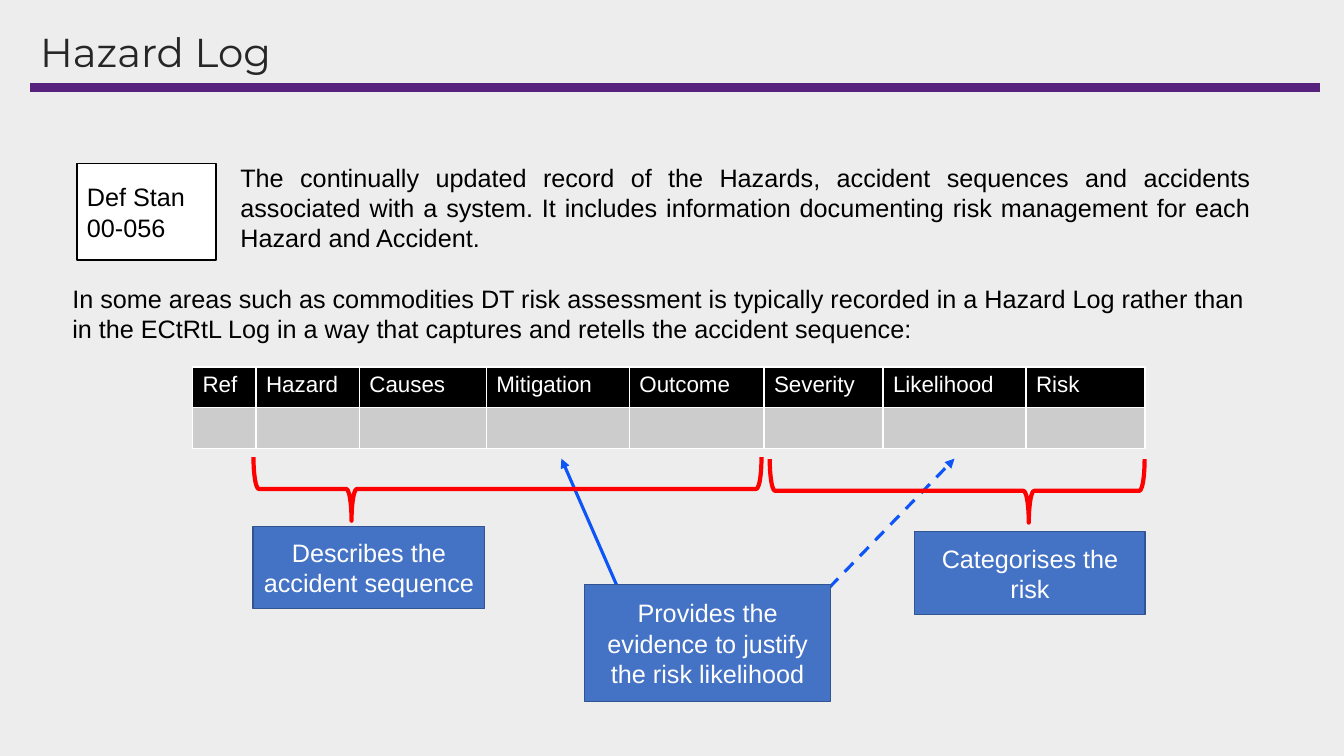
"""Build the Hazard Log slide."""
from lxml.etree import SubElement
from pptx import Presentation
from pptx.dml.color import RGBColor
from pptx.enum.dml import MSO_LINE
from pptx.enum.shapes import MSO_CONNECTOR, MSO_SHAPE
from pptx.enum.text import MSO_ANCHOR, PP_ALIGN
from pptx.oxml.ns import qn
from pptx.util import Pt


class Theme:
    back = RGBColor.from_string("EDEDED")
    rule = RGBColor.from_string("56227D")
    title = RGBColor.from_string("262626")
    black = RGBColor.from_string("000000")
    white = RGBColor.from_string("FFFFFF")
    grey = RGBColor.from_string("CCCCCC")
    box = RGBColor.from_string("4472C4")
    edge = RGBColor.from_string("325491")
    arrow = RGBColor.from_string("0D55F7")
    brace = RGBColor.from_string("FF0000")
    head_font, font = "Montserrat", "Arial"
    head_size, size, cell_size = Pt(28.8), Pt(18), Pt(16)


def write(frame, text, color, align=PP_ALIGN.LEFT, size=Theme.size, font=Theme.font):
    frame.text = text
    frame.word_wrap = True
    para = frame.paragraphs[0]
    para.alignment = align
    for run in para.runs:
        run.font.size = size
        run.font.name = font
        run.font.color.rgb = color


def draw_line(start, end, color, width):
    line = shapes.add_connector(MSO_CONNECTOR.STRAIGHT, *map(Pt, start + end))
    line.line.color.rgb = color
    line.line.width = Pt(width)
    SubElement(line._element.spPr, qn("a:effectLst"))
    return line


deck = Presentation()
deck.slide_width, deck.slide_height = Pt(960), Pt(540)
slide = deck.slides.add_slide(deck.slide_layouts[6])
slide.background.fill.solid()
slide.background.fill.fore_color.rgb = Theme.back
shapes = slide.shapes

draw_line((21.6, 62.6), (943.2, 62.6), Theme.rule, 6)
title = shapes.add_textbox(Pt(21.6), Pt(19.8), Pt(921.6), Pt(38.2)).text_frame
write(title, "Hazard Log", Theme.title, size=Theme.head_size, font=Theme.head_font)
title.vertical_anchor = MSO_ANCHOR.MIDDLE
title.paragraphs[0].line_spacing = 0.9

for start, end, dash in [
    ((465.8, 475.9), (401, 327.6), None),
    ((537.8, 475.9), (681.8, 327.6), MSO_LINE.DASH),
]:
    arrow = draw_line(start, end, Theme.arrow, 2.25)
    if dash:
        arrow.line.dash_style = dash
    SubElement(arrow.line._get_or_add_ln(), qn("a:tailEnd"), type="triangle")

for place, align, text in [
    ((164.6, 112.3, 735.8, 72.7), PP_ALIGN.JUSTIFY,
     "The continually updated record of the Hazards, accident sequences and accidents "
     "associated with a system. It includes information documenting risk management "
     "for each Hazard and Accident."),
    ((44.6, 198.7, 866.2, 51.1), PP_ALIGN.LEFT,
     "In some areas such as commodities DT risk assessment is typically recorded in a "
     "Hazard Log rather than in the ECtRtL Log in a way that captures and retells the "
     "accident sequence:"),
]:
    write(shapes.add_textbox(*map(Pt, place)).text_frame, text, Theme.black, align)

heads = ["Ref", "Hazard", "Causes", "Mitigation", "Outcome", "Severity", "Likelihood", "Risk"]
widths = [45.4, 73.8, 90.7, 102.2, 96.2, 85, 102.2, 85]
table = shapes.add_table(2, len(heads), Pt(137.5), Pt(262.1), Pt(sum(widths)), Pt(58.4)).table
for col, width in zip(table.columns, widths):
    col.width = Pt(width)
for row, (texts, color) in enumerate([(heads, Theme.black), ([""] * len(heads), Theme.grey)]):
    table.rows[row].height = Pt(29.2)
    for col, text in enumerate(texts):
        cell = table.cell(row, col)
        write(cell.text_frame, text, Theme.white, size=Theme.cell_size)
        for side in ("lnL", "lnR", "lnT", "lnB"):
            border = SubElement(cell._tc.get_or_add_tcPr(), qn("a:" + side), w=str(Pt(1)))
            SubElement(SubElement(border, qn("a:solidFill")), qn("a:srgbClr"), val=str(Theme.white))
        cell.fill.solid()
        cell.fill.fore_color.rgb = color

for place, point in [((339.8, 167.8, 45.4, 362.9), 0.807), ((661, 216.7, 45.4, 267.8), 0.309)]:
    brace = shapes.add_shape(MSO_SHAPE.RIGHT_BRACE, *map(Pt, place))
    brace.rotation = 90
    brace.adjustments[0], brace.adjustments[1] = 0.083, point
    brace.shadow.inherit = False
    brace.fill.background()
    brace.line.color.rgb = Theme.brace
    brace.line.width = Pt(3)

blue = (Theme.box, Theme.edge, Theme.white, PP_ALIGN.CENTER)
plain = (Theme.white, Theme.black, Theme.black, PP_ALIGN.LEFT)
for place, text, (fill, edge, ink, align) in [
    ((180.8, 376.2, 165.4, 58.3), "Describes the accident sequence", blue),
    ((417.6, 417.6, 175.7, 83.5), "Provides the evidence to justify the risk likelihood", blue),
    ((653.4, 379.8, 164.6, 59), "Categorises the risk", blue),
    ((55, 116.8, 99.4, 69.1), "Def Stan 00-056", plain),
]:
    box = shapes.add_shape(MSO_SHAPE.RECTANGLE, *map(Pt, place))
    box.shadow.inherit = False
    box.fill.solid()
    box.fill.fore_color.rgb = fill
    box.line.color.rgb = edge
    box.line.width = Pt(1)
    write(box.text_frame, text, ink, align)
    box.text_frame.vertical_anchor = MSO_ANCHOR.MIDDLE

deck.save("out.pptx")
